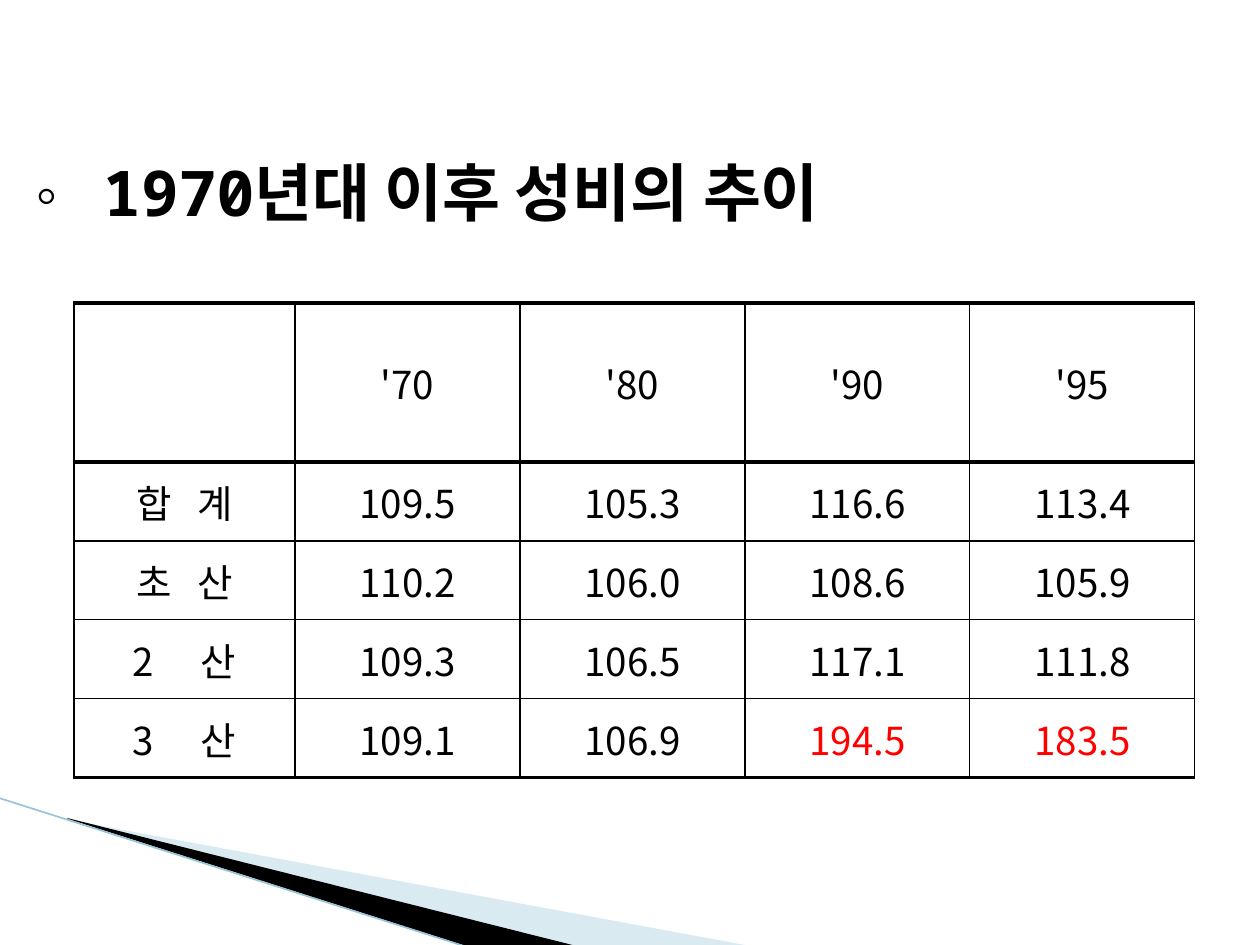
import pptx
import pptx.util
import pptx.dml.color
import pptx.enum.text
import pptx.oxml.ns
import lxml.etree

RGB = pptx.dml.color.RGBColor
BLACK = RGB(0x00, 0x00, 0x00)
RED = RGB(0xFF, 0x00, 0x00)
PALE = RGB(0xA0, 0xCB, 0xDC)
EDGE = RGB(0x97, 0xC5, 0xD8)
SANS = "Noto Sans CJK KR"
MONO = "Noto Sans Mono"
UNIT = 914400 / 126

HEAD = ["◦ ", "1970년대 이후 성비의 추이"]
ROWS = [
    ["", "'70", "'80", "'90", "'95"],
    ["합   계", "109.5", "105.3", "116.6", "113.4"],
    ["초   산", "110.2", "106.0", "108.6", "105.9"],
    ["산", "109.3", "106.5", "117.1", "111.8"],
    ["산", "109.1", "106.9", "194.5", "183.5"],
]
BIRTHS = {3: 2, 4: 3}
HOT = {"194.5", "183.5"}
WIDTHS = [221] + [225] * 4
HEIGHTS = [159] + [79] * 4
THICK = {0, 1, len(ROWS)}
WEDGES = [
    (PALE, 40, [(69, 820), (750, 946), (575, 946), (69, 819)]),
    (BLACK, 100, [(67, 818), (576, 946), (469, 947), (68, 819)]),
]


def px(n):
    return pptx.util.Emu(round(n * UNIT))


def add(node, tag, **attrs):
    return lxml.etree.SubElement(node, pptx.oxml.ns.qn(tag), attrs)


def style(run, face, size, color, bold=False):
    font = run.font
    font.name, font.size, font.bold = face, pptx.util.Pt(size), bold
    font.color.rgb = color
    add(run._r.get_or_add_rPr(), "a:ea", typeface=SANS)


def border(cell, row):
    props = cell._tc.get_or_add_tcPr()
    sides = [("L", False), ("R", False), ("T", row in THICK), ("B", row + 1 in THICK)]
    for side, thick in sides:
        width = pptx.util.Pt(2 if thick else 0.75)
        line = add(props, "a:ln" + side, w=str(width))
        add(add(line, "a:solidFill"), "a:srgbClr", val=str(BLACK))


def draw_wedge(slide, color, alpha, points):
    form = slide.shapes.build_freeform(*points[0], scale=UNIT)
    form.add_line_segments(points[1:], close=True)
    wedge = form.convert_to_shape()
    wedge.shadow.inherit = False
    wedge.fill.solid()
    wedge.fill.fore_color.rgb = color
    wedge.line.fill.background()
    if alpha < 100:
        tint = wedge._element.spPr.find(".//" + pptx.oxml.ns.qn("a:srgbClr"))
        add(tint, "a:alpha", val=str(alpha * 1000))


def draw_edge(slide):
    edge = slide.shapes.add_connector(1, px(-1), px(798), px(467), px(947))
    edge.line.color.rgb = EDGE
    edge.line.width = pptx.util.Pt(0.95)
    add(edge._element.spPr, "a:effectLst")


def draw_table(slide):
    frame = slide.shapes.add_table(len(ROWS), len(WIDTHS), px(74), px(303),
                                   px(sum(WIDTHS)), px(sum(HEIGHTS)))
    table = frame.table
    table.first_row = table.horz_banding = False
    for col, width in zip(table.columns, WIDTHS):
        col.width = px(width)
    for row, height in zip(table.rows, HEIGHTS):
        row.height = px(height)
    for r, texts in enumerate(ROWS):
        for c, text in enumerate(texts):
            cell = table.cell(r, c)
            border(cell, r)
            cell.fill.background()
            cell.vertical_anchor = pptx.enum.text.MSO_ANCHOR.MIDDLE
            para = cell.text_frame.paragraphs[0]
            para.text = text
            para.alignment = pptx.enum.text.PP_ALIGN.CENTER
            if c == 0 and r in BIRTHS:
                props = para._p.get_or_add_pPr()
                props.set("marL", str(px(68)))
                props.set("indent", str(px(-68)))
                add(props, "a:buFont", typeface=SANS)
                add(props, "a:buAutoNum", type="arabicPlain", startAt=str(BIRTHS[r]))
            for run in para.runs:
                style(run, SANS, 22, RED if text in HOT else BLACK)


def fill_body(slide):
    title, body = slide.shapes.title, slide.placeholders[1]
    tree = title._element.getparent()
    tree.remove(title._element)
    tree.append(body._element)
    body.left, body.top, body.width, body.height = px(0), px(147), px(1092), px(669)
    frame = body.text_frame
    frame.auto_size = pptx.enum.text.MSO_AUTO_SIZE.NONE
    para = frame.paragraphs[0]
    para.space_before = pptx.util.Pt(0)
    props = para._p.get_or_add_pPr()
    props.set("marL", str(px(50)))
    props.set("indent", str(px(-35)))
    add(props, "a:buNone")
    for i, text in enumerate(HEAD):
        run = para.add_run()
        run.text = text
        style(run, MONO, 36, BLACK, bold=i > 0)


def main():
    deck = pptx.Presentation()
    deck.slide_width, deck.slide_height = px(1260), px(945)
    slide = deck.slides.add_slide(deck.slide_layouts[1])
    for wedge in WEDGES:
        draw_wedge(slide, *wedge)
    draw_edge(slide)
    draw_table(slide)
    fill_body(slide)
    deck.save("out.pptx")


if __name__ == "__main__":
    main()
